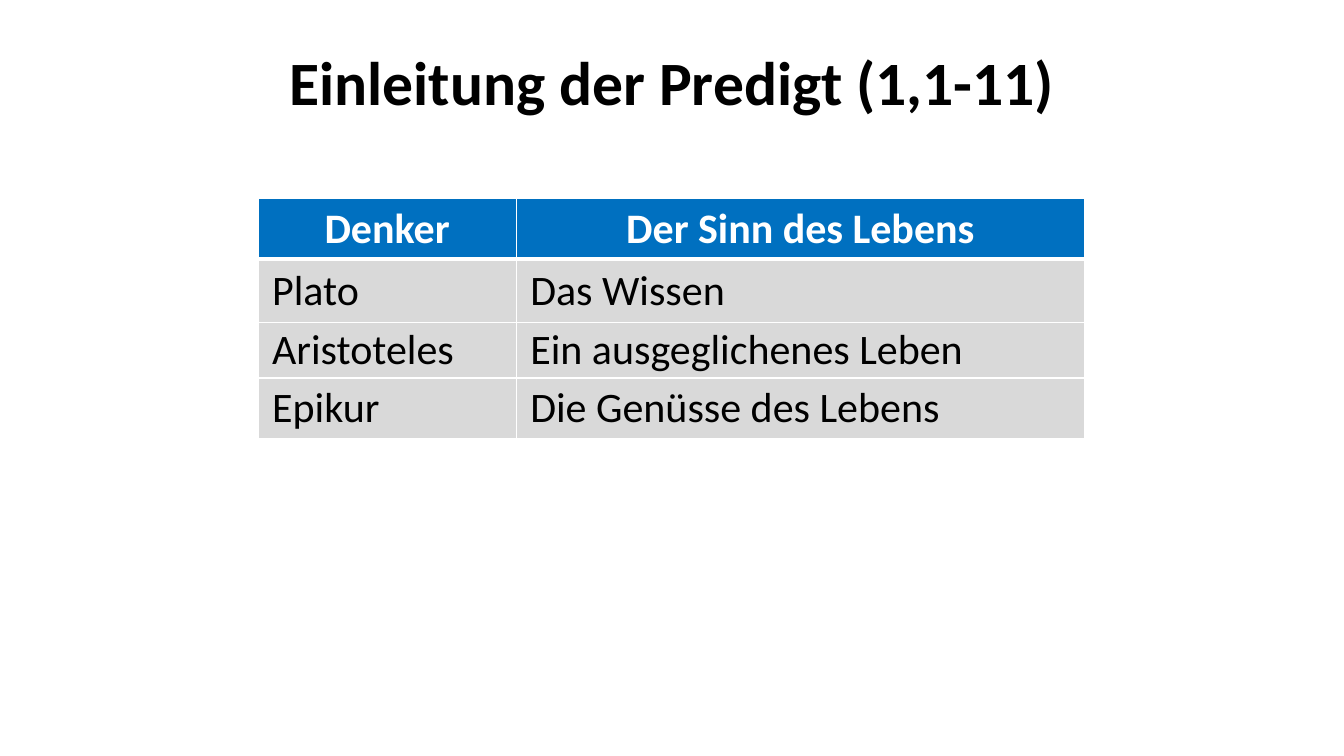
from lxml import etree
from pptx import Presentation
from pptx import util as u
from pptx.dml.color import RGBColor
from pptx.enum import text
from pptx.oxml.ns import qn

WHITE, BLACK, BLUE, GREY = "FFFFFF", "000000", "0070C0", "D9D9D9"


def style(para, size, color, bold):
    for run in para.runs:
        font = run.font
        font.name, font.size, font.bold = "Calibri", u.Pt(size), bold
        font.color.rgb = RGBColor.from_string(color)


def edge(cell, side, width):
    """Draw a white border on one side (L, R, T or B) of a cell."""
    props = cell._tc.get_or_add_tcPr()
    line = etree.SubElement(props, qn("a:ln" + side), w=str(u.Pt(width)))
    fill = etree.SubElement(line, qn("a:solidFill"))
    etree.SubElement(fill, qn("a:srgbClr"), val=WHITE)


deck = Presentation()
deck.slide_width, deck.slide_height = u.Inches(13.33), u.Inches(7.5)
slide = deck.slides.add_slide(deck.slide_layouts[5])

title = slide.shapes.title
title.left, title.top = u.Inches(0.92), u.Inches(0.4)
title.width, title.height = u.Inches(11.5), u.Inches(0.89)
frame = title.text_frame
frame.text = "Einleitung der Predigt (1,1-11)"
frame.vertical_anchor = text.MSO_ANCHOR.MIDDLE
head = frame.paragraphs[0]
head.alignment = text.PP_ALIGN.CENTER
head.line_spacing = 0.9
style(head, 44, BLACK, True)

rows = [
    ("Denker", "Der Sinn des Lebens"),
    ("Plato", "Das Wissen"),
    ("Aristoteles", "Ein ausgeglichenes Leben"),
    ("Epikur", "Die Genüsse des Lebens"),
]
widths = [2.56, 5.64]
heights = [0.6, 0.63, 0.55, 0.6]

table = slide.shapes.add_table(
    len(rows), len(widths), u.Inches(2.56), u.Inches(1.97),
    u.Inches(sum(widths)), u.Inches(sum(heights))).table
table.horz_banding = False
for col, width in zip(table.columns, widths):
    col.width = u.Inches(width)

for r, (row, height) in enumerate(zip(rows, heights)):
    table.rows[r].height = u.Inches(height)
    top = r == 0
    for c, words in enumerate(row):
        cell = table.cell(r, c)
        cell.margin_left = cell.margin_right = u.Inches(0.14)
        cell.margin_top = cell.margin_bottom = 0
        cell.vertical_anchor = text.MSO_ANCHOR.MIDDLE
        for side in "LRTB":
            thick = (top and side == "B") or (r == 1 and side == "T")
            edge(cell, side, 3 if thick else 1)
        cell.fill.solid()
        cell.fill.fore_color.rgb = RGBColor.from_string(BLUE if top else GREY)
        cell.text_frame.text = words
        para = cell.text_frame.paragraphs[0]
        para.alignment = text.PP_ALIGN.CENTER if top else text.PP_ALIGN.LEFT
        style(para, 30, WHITE if top else BLACK, top)

deck.save("out.pptx")
